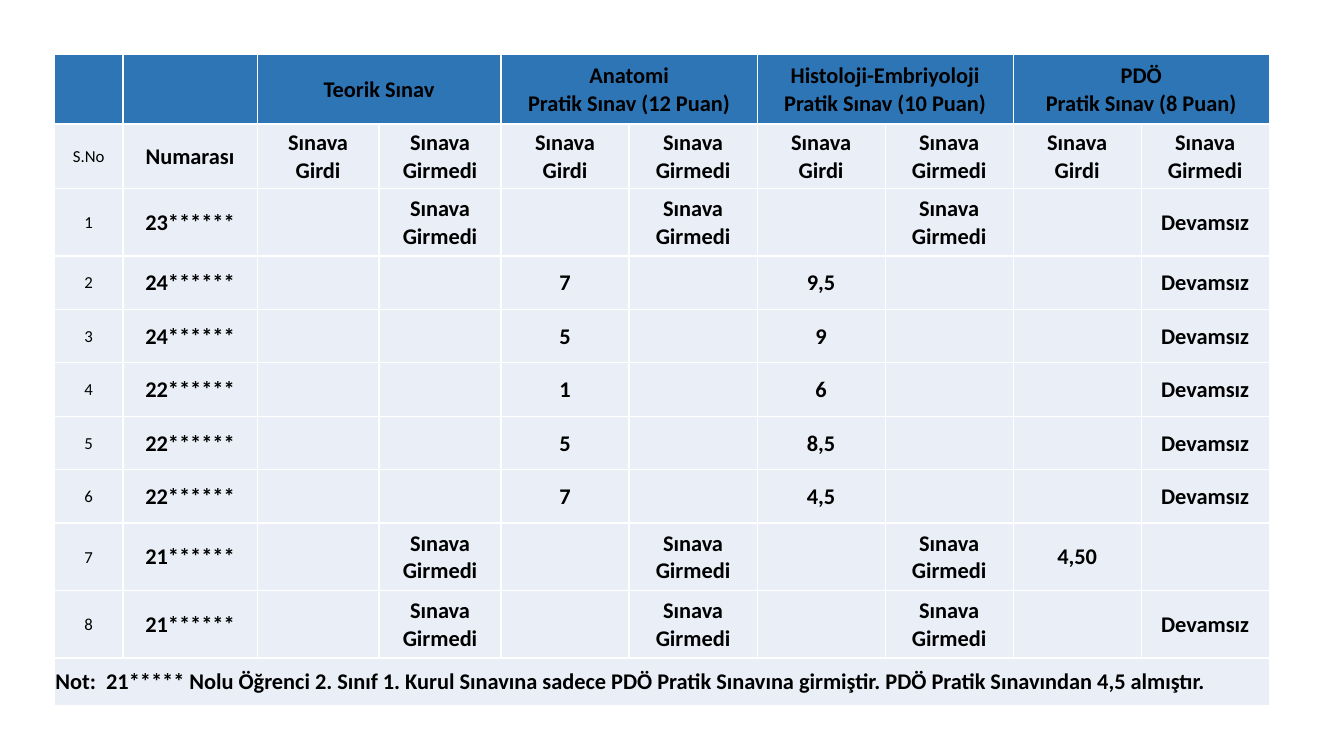
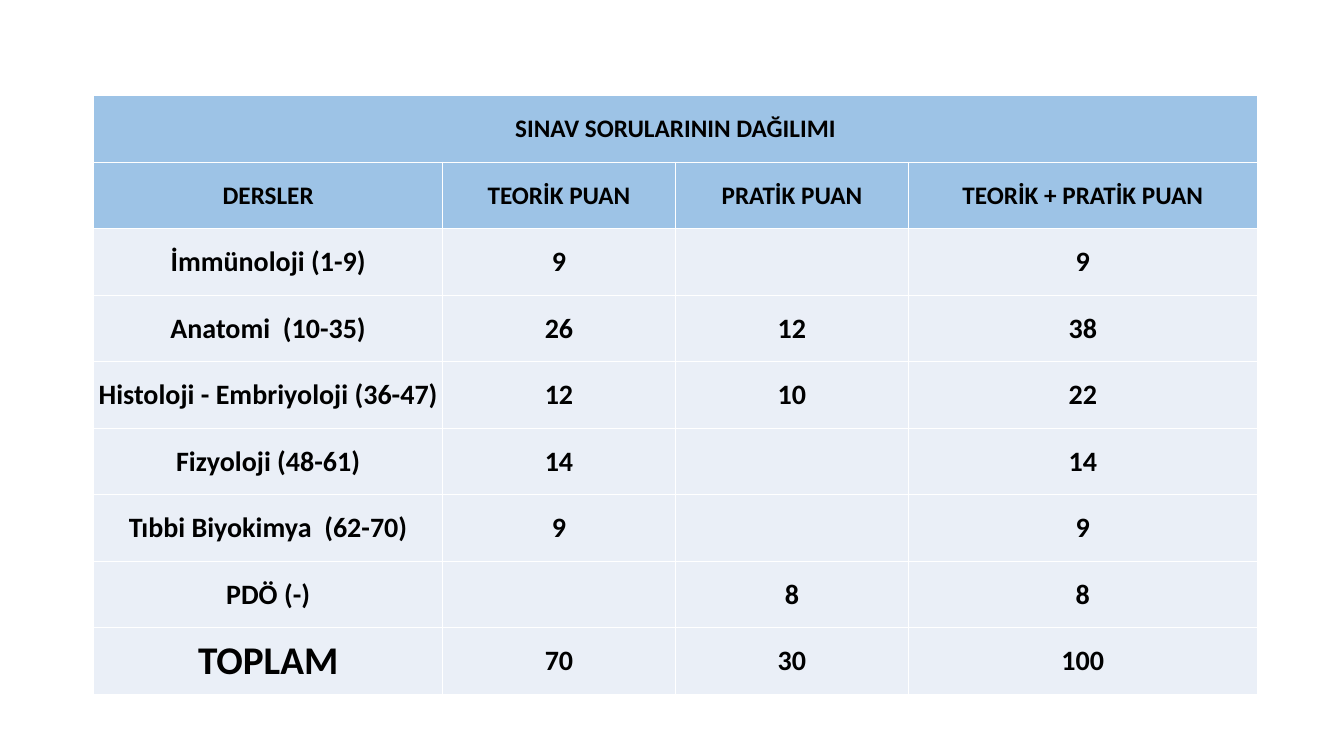
import collections

import lxml.etree
import pptx
import pptx.dml.color
import pptx.enum.text
import pptx.oxml.ns
import pptx.util

Label = collections.namedtuple("Label", "text size bold centred", defaults=(16, True, True))

NOT_TAKEN = "Sınava\nGirmedi"
ABSENT = "Devamsız"
EXAMS = [
    "Teorik Sınav",
    "Anatomi\nPratik Sınav (12 Puan)",
    "Histoloji-Embriyoloji\nPratik Sınav (10 Puan)",
    "PDÖ\nPratik Sınav (8 Puan)",
]
STUDENTS = [
    ("23******", NOT_TAKEN, NOT_TAKEN, NOT_TAKEN, ABSENT),
    ("24******", "", "7", "9,5", ABSENT),
    ("24******", "", "5", "9", ABSENT),
    ("22******", "", "1", "6", ABSENT),
    ("22******", "", "5", "8,5", ABSENT),
    ("22******", "", "7", "4,5", ABSENT),
    ("21******", NOT_TAKEN, NOT_TAKEN, NOT_TAKEN, "4,50"),
    ("21******", NOT_TAKEN, NOT_TAKEN, NOT_TAKEN, ABSENT),
]
NOTE = (
    "Not:  21***** Nolu Öğrenci 2. Sınıf 1. Kurul Sınavına sadece PDÖ Pratik Sınavına "
    "girmiştir. PDÖ Pratik Sınavından 4,5 almıştır."
)
SUBJECTS = [
    ("İmmünoloji (1-9)", "9", "", "9"),
    ("Anatomi  (10-35)", "26", "12", "38"),
    ("Histoloji - Embriyoloji (36-47)", "12", "10", "22"),
    ("Fizyoloji (48-61)", "14", "", "14"),
    ("Tıbbi Biyokimya  (62-70)", "9", "", "9"),
    ("PDÖ (-)", "", "8", "8"),
]


def color(value):
    return pptx.dml.color.RGBColor.from_string(value)


def px(length):
    return pptx.util.Emu(length * 9144)


class Deck:
    FONT = "Calibri"
    TEXT = "000000"
    BODY = "EAEFF7"
    BORDER = "FFFFFF"
    DARK_HEADER = "2E75B6"
    LIGHT_HEADER = "9DC3E6"

    def __init__(self):
        self.presentation = pptx.Presentation()
        self.presentation.slide_width = px(1333)
        self.presentation.slide_height = px(750)
        self.slide = None

    def new_slide(self):
        self.slide = self.presentation.slides.add_slide(self.presentation.slide_layouts[6])

    def table(self, left, top, widths, heights, rows, header_fills, spans, margin):
        frame = self.slide.shapes.add_table(
            len(heights), len(widths), px(left), px(top), px(sum(widths)), px(sum(heights))
        )
        table = frame.table
        table.first_row = table.horz_banding = False
        for column, width in zip(table.columns, widths):
            column.width = px(width)
        for row, height in zip(table.rows, heights):
            row.height = px(height)
        for row, first, last in spans:
            table.cell(row, first).merge(table.cell(row, last))
        for row_index, labels in enumerate(rows):
            fill = header_fills[row_index] if row_index < len(header_fills) else self.BODY
            for column_index, label in enumerate(labels):
                self.cell(table.cell(row_index, column_index), label, fill, margin)

    def cell(self, cell, label, fill, margin):
        self.borders(cell)
        cell.fill.solid()
        cell.fill.fore_color.rgb = color(fill)
        cell.margin_left = cell.margin_right = cell.margin_top = px(margin)
        cell.margin_bottom = 0
        cell.vertical_anchor = pptx.enum.text.MSO_ANCHOR.MIDDLE
        if label.text:
            self.text(cell.text_frame.paragraphs[0], label)

    def text(self, paragraph, label):
        alignment = pptx.enum.text.PP_ALIGN
        paragraph.alignment = alignment.CENTER if label.centred else alignment.LEFT
        for index, line in enumerate(label.text.split("\n")):
            if index:
                paragraph.add_line_break()
            run = paragraph.add_run()
            run.text = line
            run.font.name = self.FONT
            run.font.size = pptx.util.Pt(label.size)
            run.font.bold = label.bold
            run.font.color.rgb = color(self.TEXT)

    def borders(self, cell):
        qualified = pptx.oxml.ns.qn
        properties = cell._tc.get_or_add_tcPr()
        for side in ("a:lnL", "a:lnR", "a:lnT", "a:lnB"):
            line = lxml.etree.SubElement(properties, qualified(side), w=str(pptx.util.Pt(1)))
            fill = lxml.etree.SubElement(line, qualified("a:solidFill"))
            lxml.etree.SubElement(fill, qualified("a:srgbClr"), val=self.BORDER)


def result_row(number, student):
    student_number, *results = student
    labels = [Label(number, 12, False), Label(student_number)]
    for result in results:
        missed = result in (NOT_TAKEN, ABSENT)
        labels += [Label("" if missed else result), Label(result if missed else "")]
    return labels


def build_results(deck):
    deck.new_slide()
    exam_columns = range(2, 10, 2)
    exam_header = [Label("")] * 2
    for exam in EXAMS:
        exam_header += [Label(exam), Label("")]
    column_header = [Label("S.No", 12, False), Label("Numarası")]
    column_header += [Label("Sınava\nGirdi"), Label(NOT_TAKEN)] * len(EXAMS)
    rows = [exam_header, column_header]
    rows += [result_row(str(number), student) for number, student in enumerate(STUDENTS, 1)]
    rows.append([Label(NOTE, centred=False)] + [Label("")] * 9)
    deck.table(
        54, 54,
        [68, 133] + [121] * 2 + [127] * 6,
        [69, 64, 67] + [53] * 5 + [67] * 2 + [47],
        rows,
        [deck.DARK_HEADER],
        [(0, column, column + 1) for column in exam_columns] + [(len(rows) - 1, 0, 9)],
        1,
    )


def build_distribution(deck):
    deck.new_slide()
    headers = [
        ("SINAV SORULARININ DAĞILIMI", "", "", ""),
        ("DERSLER", "TEORİK PUAN", "PRATİK PUAN", "TEORİK + PRATİK PUAN"),
    ]
    rows = [[Label(text, 18) for text in header] for header in headers]
    rows += [[Label(text, 20) for text in subject] for subject in SUBJECTS]
    rows.append([Label("TOPLAM", 28)] + [Label(total, 20) for total in ("70", "30", "100")])
    deck.table(
        93, 95,
        [346, 231, 231, 346],
        [66] * len(rows),
        rows,
        [deck.LIGHT_HEADER] * len(headers),
        [(0, 0, 3)],
        0,
    )


def main():
    deck = Deck()
    build_results(deck)
    build_distribution(deck)
    deck.presentation.save("out.pptx")


if __name__ == "__main__":
    main()
